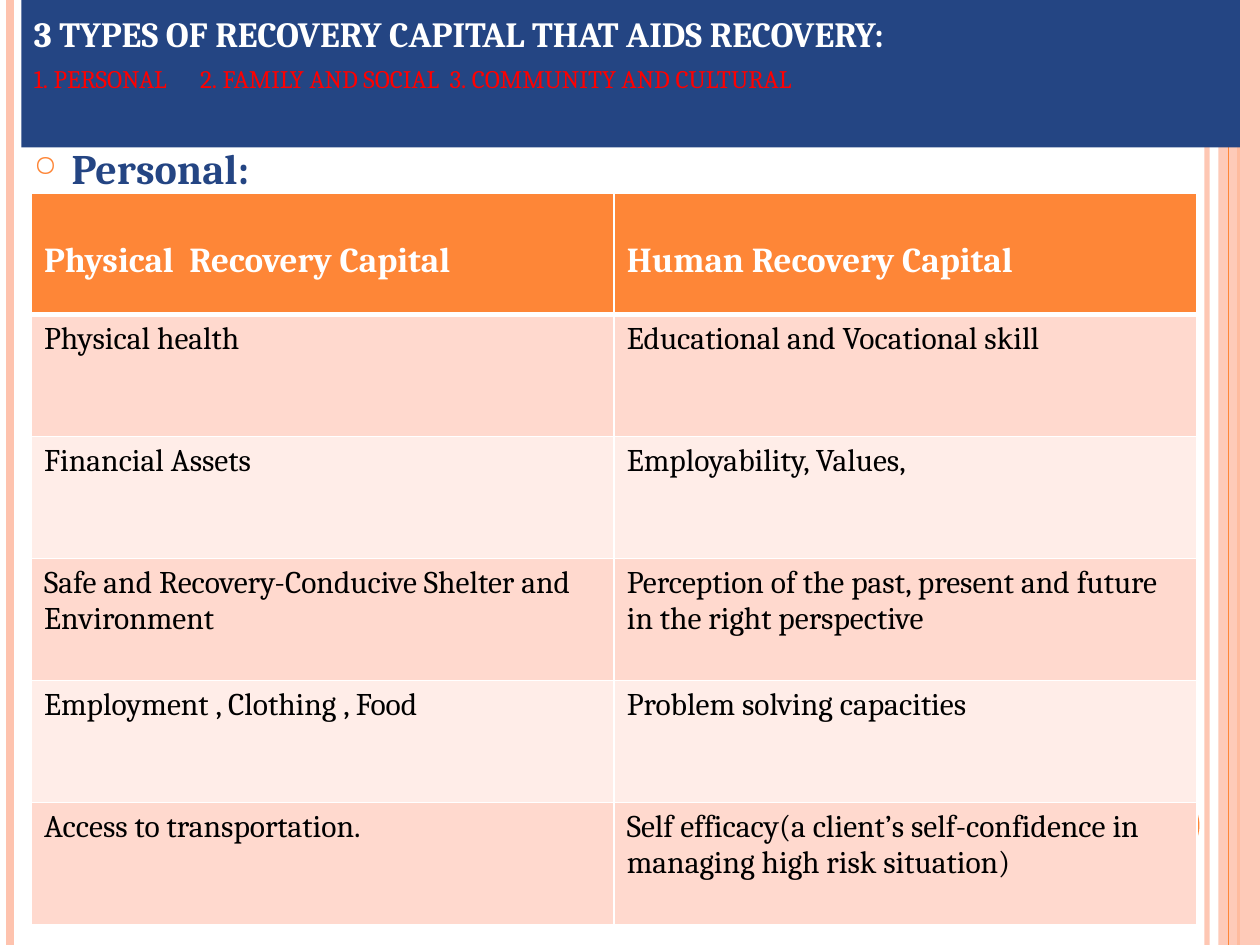
"""Build the slide on personal recovery capital."""
import pptx
import pptx.dml.color
import pptx.enum.shapes
import pptx.enum.text
import pptx.oxml
import pptx.oxml.ns
import pptx.util

Inches = pptx.util.Inches
Pt = pptx.util.Pt
FONT = "Cambria"
COLORS = {
    "navy": "244583", "orange": "FE8637", "peach": "FEC3AE",
    "band_dark": "FFD9CE", "band_light": "FFEDE8",
    "white": "FFFFFF", "black": "000000", "red": "FF0000",
}
STRIPES = [(9.58, "peach", 3, 93), (0.08, "peach", 4.5, 100), (9.83, "orange", 1.5, 100)]
ROWS = [
    ("Physical  Recovery Capital", "Human Recovery Capital"),
    ("Physical health", "Educational and Vocational skill"),
    ("Financial Assets", "Employability, Values,"),
    ("Safe and Recovery-Conducive Shelter and Environment",
     "Perception of the past, present and future in the right perspective"),
    ("Employment , Clothing , Food", "Problem solving capacities"),
    ("Access to transportation.",
     "Self efficacy(a client’s self-confidence in managing high risk situation)"),
]


def rgb(name):
    return pptx.dml.color.RGBColor.from_string(COLORS[name])


def add_xml(parent, body, index=None):
    head, rest = body.split(" ", 1)
    element = pptx.oxml.parse_xml(f"{head} {pptx.oxml.ns.nsdecls('a')} {rest}")
    parent.insert(len(parent) if index is None else index, element)


def set_alpha(element, percent):
    if percent < 100:
        color = element.find(".//" + pptx.oxml.ns.qn("a:srgbClr"))
        add_xml(color, f'<a:alpha val="{percent * 1000}"/>')


def add_stripe(page, x, color, width, alpha=100):
    stripe = page.shapes.add_connector(
        pptx.enum.shapes.MSO_CONNECTOR.STRAIGHT, Inches(x), 0, Inches(x), Inches(7.5))
    stripe.line.color.rgb = rgb(color)
    stripe.line.width = Pt(width)
    set_alpha(stripe.line._ln, alpha)
    add_xml(stripe._element.spPr, "<a:effectLst />")


def add_block(page, kind, place, color, alpha=100):
    block = page.shapes.add_shape(kind, *map(Inches, place))
    block.shadow.inherit = False
    block.fill.solid()
    block.fill.fore_color.rgb = rgb(color)
    block.line.fill.background()
    set_alpha(block._element.spPr, alpha)
    return block


def style(para, size, color, bold=False):
    para.alignment = pptx.enum.text.PP_ALIGN.LEFT
    for span in para.runs:
        span.font.name = FONT
        span.font.size = Pt(size)
        span.font.bold = bold
        span.font.color.rgb = rgb(color)


def add_title(page):
    banner = add_block(page, pptx.enum.shapes.MSO_SHAPE.RECTANGLE, (0.17, 0, 9.67, 1.17), "navy")
    frame = banner.text_frame
    frame.vertical_anchor = pptx.enum.text.MSO_ANCHOR.TOP
    frame.margin_top = Inches(0.03)
    frame.text = ("3 types of recovery capital that aids recovery:\n"
                  "1. personal\t2. family and social\t3. community and cultural")
    heading, types = frame.paragraphs
    style(heading, 25.2, "white", True)
    style(types, 18, "red")
    stops = "".join(f'<a:tab pos="{Inches(x)}" algn="l"/>' for x in (1.32, 3.3))
    add_xml(types._p.get_or_add_pPr(), f"<a:tabLst >{stops}</a:tabLst>")
    for span in heading.runs + types.runs:
        span.font._element.set("cap", "small")


def add_subject(page):
    box = page.shapes.add_textbox(Inches(0.17), Inches(1.08), Inches(9.5), Inches(6.25))
    box.text_frame.word_wrap = True
    box.text_frame.text = "Personal:"
    para = box.text_frame.paragraphs[0]
    style(para, 24, "navy", True)
    para.space_before = Pt(6)
    properties = para._p.get_or_add_pPr()
    properties.set("marL", str(Inches(0.3)))
    properties.set("indent", str(Inches(-0.3)))
    add_xml(properties, f'<a:buClr ><a:srgbClr val="{COLORS["orange"]}"/></a:buClr>')
    add_xml(properties, '<a:buSzPct val="70000"/>')
    add_xml(properties, '<a:buChar char="○"/>')


def format_cell(cell, row):
    header = row == 0
    widths = {"L": 1, "R": 1, "T": 3 if row == 1 else 1, "B": 3 if header else 1}
    for side, width in widths.items():
        add_xml(cell._tc.get_or_add_tcPr(),
                f'<a:ln{side} w="{Pt(width)}"><a:solidFill>'
                f'<a:srgbClr val="{COLORS["white"]}"/></a:solidFill></a:ln{side}>')
    cell.fill.solid()
    band = "band_dark" if row % 2 else "band_light"
    cell.fill.fore_color.rgb = rgb("orange" if header else band)
    if header:
        cell.margin_top = Inches(0.38)
    style(cell.text_frame.paragraphs[0], 20 if header else 18,
          "white" if header else "black", header)


def add_capital_table(page):
    frame = page.shapes.add_table(
        len(ROWS), 2, Inches(0.25), Inches(1.53), Inches(9.25), Inches(5.81))
    for row, texts in enumerate(ROWS):
        for column, text in enumerate(texts):
            cell = frame.table.cell(row, column)
            cell.text = text
            format_cell(cell, row)


def main():
    deck = pptx.Presentation()
    deck.slide_width, deck.slide_height = Inches(10), Inches(7.5)
    page = deck.slides.add_slide(deck.slide_layouts[6])
    for stripe in STRIPES:
        add_stripe(page, *stripe)
    shapes = pptx.enum.shapes.MSO_SHAPE
    add_block(page, shapes.RECTANGLE, (9.67, 0, 0.33, 7.5), "peach", 87)
    add_stripe(page, 9.75, "orange", 0.75)
    add_block(page, shapes.OVAL, (8.92, 6.25, 0.6, 0.6), "orange")
    add_title(page)
    add_subject(page)
    add_capital_table(page)
    deck.save("out.pptx")


if __name__ == "__main__":
    main()
